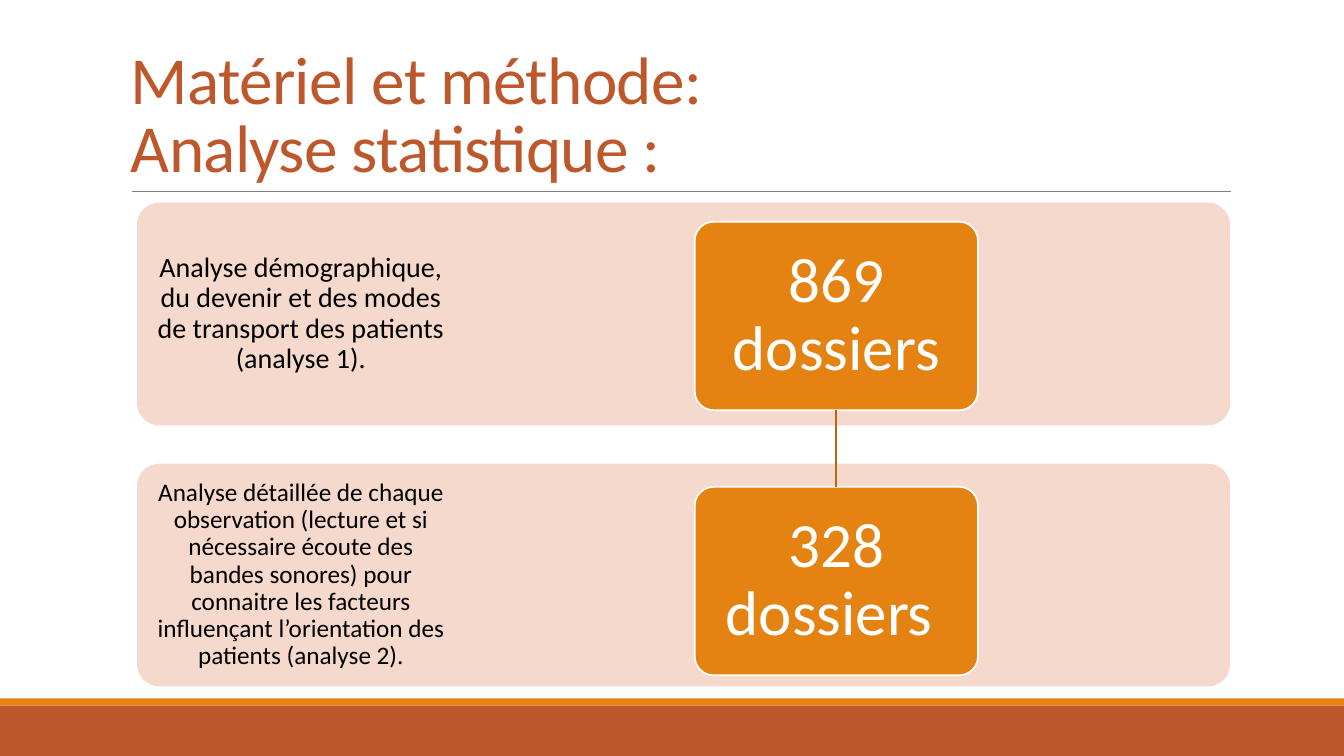
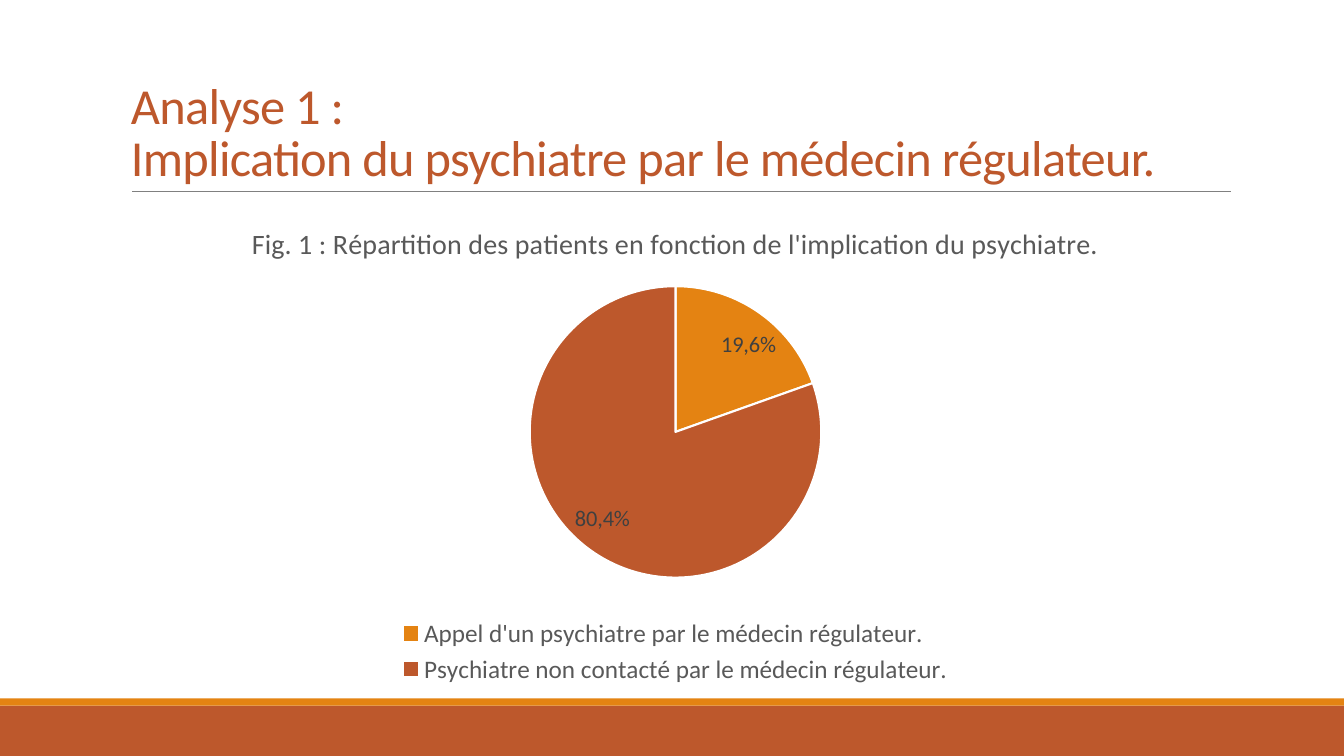
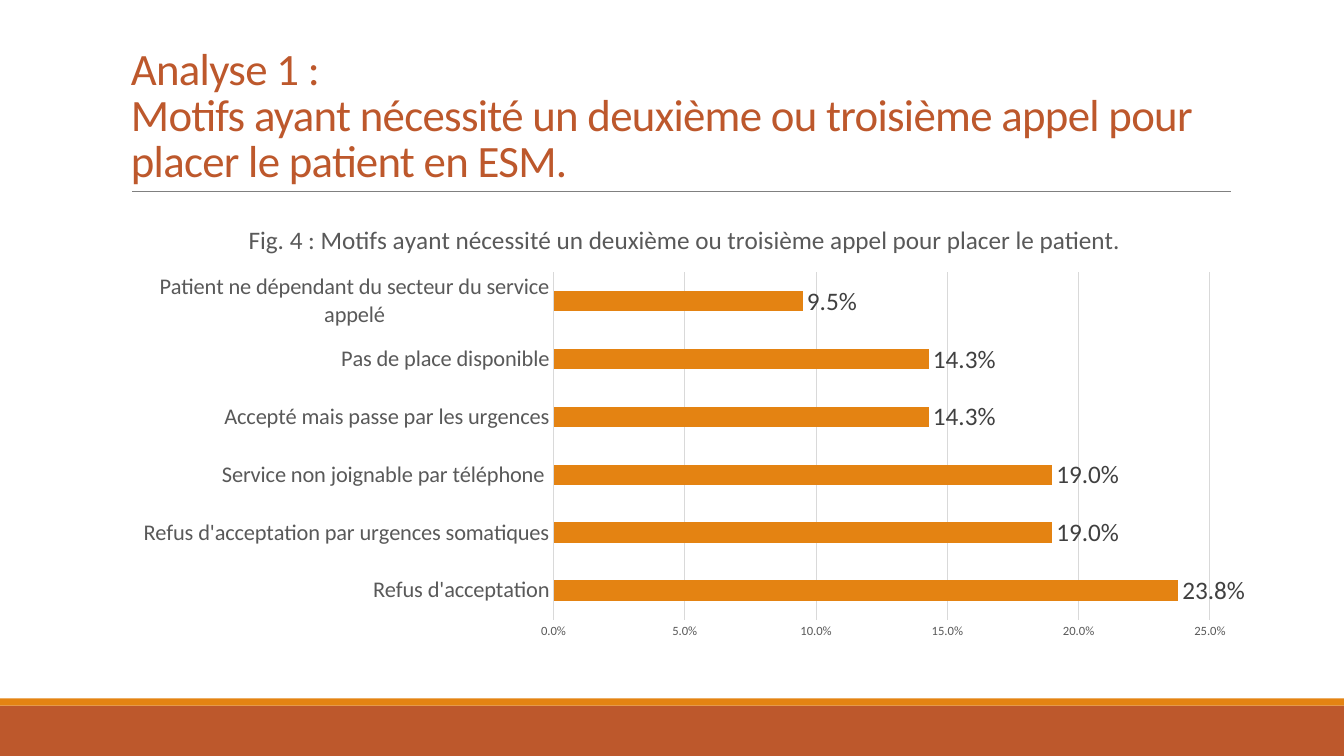
from lxml import etree
from pptx import Presentation
from pptx.chart.data import CategoryChartData
from pptx.dml.color import RGBColor
from pptx.enum.chart import XL_CHART_TYPE, XL_LABEL_POSITION, XL_LEGEND_POSITION, XL_TICK_MARK
from pptx.enum.shapes import MSO_CONNECTOR, MSO_SHAPE
from pptx.enum.text import MSO_ANCHOR, PP_ALIGN
from pptx.oxml import parse_xml
from pptx.oxml.ns import nsdecls, qn
from pptx.util import Pt

PIE, BAR = XL_CHART_TYPE.PIE, XL_CHART_TYPE.BAR_CLUSTERED
BEST_FIT, OUTSIDE_END = XL_LABEL_POSITION.BEST_FIT, XL_LABEL_POSITION.OUTSIDE_END
LEGEND_BOTTOM = XL_LEGEND_POSITION.BOTTOM
NO_TICK = XL_TICK_MARK.NONE
STRAIGHT = MSO_CONNECTOR.STRAIGHT
RECT, ROUND_RECT = MSO_SHAPE.RECTANGLE, MSO_SHAPE.ROUNDED_RECTANGLE
MIDDLE, BOTTOM = MSO_ANCHOR.MIDDLE, MSO_ANCHOR.BOTTOM
CENTER = PP_ALIGN.CENTER

FONT = "Calibri"
RUST, ORANGE, BLUSH, DARK_ORANGE = "BD582C", "E48312", "F5D9CC", "B7690E"
WHITE, BLACK = "FFFFFF", "000000"
RULE, GRID, GREY, CHARCOAL = "808080", "D9D9D9", "595959", "404040"
SLIDE_W, SLIDE_H = 1333, 750
BAND_W, BAND_H = 1084, 221
BOX_W, BOX_H = 281, 187


def px(n):
    """100 px to the inch."""
    return n * 9144


def rgb(color):
    return RGBColor.from_string(color)


def set_font(font, size, color):
    font.name, font.size, font.bold = FONT, Pt(size), False
    font.color.rgb = rgb(color)


def set_line(line, color, width):
    line.color.rgb = rgb(color)
    line.width = Pt(width)


def add_block(s, shape_type, x, y, w, h, fill, outline=None):
    sp = s.shapes.add_shape(shape_type, px(x), px(y), px(w), px(h))
    sp.shadow.inherit = False
    sp.fill.solid()
    sp.fill.fore_color.rgb = rgb(fill)
    if outline:
        set_line(sp.line, outline, 1.25)
    else:
        sp.line.fill.background()
    return sp


def add_line(s, x1, y1, x2, y2, color, width):
    line = s.shapes.add_connector(STRAIGHT, px(x1), px(y1), px(x2), px(y2))
    set_line(line.line, color, width)
    etree.SubElement(line._element.spPr, qn("a:effectLst"))
    return line


def add_panel(s, x, y, w, h, fill, text, size, color, inset, right=0, outline=None):
    """Rounded panel with centred text; right is extra space kept free of text."""
    sp = add_block(s, ROUND_RECT, x, y, w, h, fill, outline)
    sp.adjustments[0] = 0.1
    tf = sp.text_frame
    tf.word_wrap = True
    tf.vertical_anchor = MIDDLE
    tf.margin_left = tf.margin_top = tf.margin_bottom = px(inset)
    tf.margin_right = px(inset + right)
    p = tf.paragraphs[0]
    p.alignment = CENTER
    p.line_spacing = 0.9
    r = p.add_run()
    r.text = text
    set_font(r.font, size, color)
    return sp


def add_title(s, lines, size):
    tf = s.shapes.add_textbox(px(120), px(31), px(1100), px(159)).text_frame
    tf.word_wrap = True
    tf.vertical_anchor = BOTTOM
    p = tf.paragraphs[0]
    p.line_spacing = 0.85
    for i, line in enumerate(lines):
        if i:
            p.add_line_break()
        r = p.add_run()
        r.text = line
        set_font(r.font, size, RUST)
        r.font._element.set("spc", "-50")
    for br in p._p.findall(qn("a:br")):
        etree.SubElement(br, qn("a:rPr"), sz=str(size * 100))


def add_slide(prs, title, size):
    s = prs.slides.add_slide(prs.slide_layouts[6])
    add_block(s, RECT, 0, 700, SLIDE_W, 50, RUST)
    add_block(s, RECT, 0, 693, SLIDE_W, 7, ORANGE)
    add_line(s, 131, 190, 1221, 190, RULE, 0.5)
    add_title(s, title, size)
    return s


def add_chart(s, kind, w, h, title, title_size, values):
    data = CategoryChartData()
    data.categories = list(values)
    data.add_series("Series 1", list(values.values()))
    chart = s.shapes.add_chart(kind, px(120), px(202), px(w), px(h), data).chart
    set_font(chart.font, 10, BLACK)
    chart.has_legend = False
    chart.has_title = True
    r = chart.chart_title.text_frame.paragraphs[0].add_run()
    r.text = title
    set_font(r.font, title_size, GREY)
    chart.chart_title.include_in_layout = False
    return chart


def set_plot_area(chart, x, y, w, h):
    """Fix the inner plot area, in fractions of the chart."""
    area = chart._chartSpace.chart.plotArea
    for old in area.findall(qn("c:layout")):
        area.remove(old)
    area.insert(0, parse_xml(
        f'<c:layout {nsdecls("c")}><c:manualLayout><c:layoutTarget val="inner"/>'
        '<c:xMode val="edge"/><c:yMode val="edge"/>'
        f'<c:x val="{x}"/><c:y val="{y}"/><c:w val="{w}"/><c:h val="{h}"/>'
        '</c:manualLayout></c:layout>'))


def style_pie(chart, slices):
    """slices: one (colour, label) pair per point."""
    plot = chart.plots[0]
    plot.vary_by_categories = True
    labels = plot.series[0].data_labels
    labels.show_value = True
    labels.position = BEST_FIT
    set_font(labels.font, 16, CHARCOAL)
    for i, (color, label) in enumerate(slices):
        point = plot.series[0].points[i]
        point.format.fill.solid()
        point.format.fill.fore_color.rgb = rgb(color)
        set_line(point.format.line, WHITE, 1.5)
        r = point.data_label.text_frame.paragraphs[0].add_run()
        r.text = label
        set_font(r.font, 16, CHARCOAL)
        point.data_label.position = BEST_FIT
    chart.has_legend = True
    chart.legend.position = LEGEND_BOTTOM
    chart.legend.include_in_layout = False
    set_font(chart.legend.font, 18, GREY)


def style_bars(chart):
    plot = chart.plots[0]
    plot.vary_by_categories = False
    plot.gap_width = 182
    fill = plot.series[0].format.fill
    fill.solid()
    fill.fore_color.rgb = rgb(ORANGE)
    labels = plot.series[0].data_labels
    labels.show_value = True
    labels.position = OUTSIDE_END
    labels.number_format, labels.number_format_is_linked = "0.0%", False
    set_font(labels.font, 18, CHARCOAL)
    cat, val = chart.category_axis, chart.value_axis
    for axis, size in ((cat, 16), (val, 9)):
        axis.major_tick_mark = axis.minor_tick_mark = NO_TICK
        set_font(axis.tick_labels.font, size, GREY)
    set_line(cat.format.line, GRID, 0.75)
    val.format.line.fill.background()
    val.minimum_scale, val.maximum_scale, val.major_unit = 0, 0.25, 0.05
    val.has_major_gridlines = True
    set_line(val.major_gridlines.format.line, GRID, 0.75)
    val.tick_labels.number_format = "0.0%"
    val.tick_labels.number_format_is_linked = False


def build_method(prs):
    s = add_slide(prs, ["Matériel et méthode:", "Analyse statistique :"], 48)
    rows = [
        (201, 220, "Analyse démographique, du devenir et des modes de transport des "
         "patients (analyse 1).", 20, 10, "869 dossiers"),
        (460, 483, "Analyse détaillée de chaque observation (lecture et si nécessaire "
         "écoute des bandes sonores) pour connaitre les facteurs influençant "
         "l’orientation des patients (analyse 2).", 18, 8, "328 dossiers "),
    ]
    boxes = []
    for band_y, box_y, text, size, inset, count in rows:
        add_panel(s, 136, band_y, BAND_W, BAND_H, BLUSH, text, size, BLACK, inset,
                  right=BAND_W - 325)
        boxes.append(add_panel(s, 689, box_y, BOX_W, BOX_H, ORANGE, count, 45, WHITE, 19,
                               outline=WHITE))
    link = add_line(s, 830, 407, 830, 483, DARK_ORANGE, 1.25)
    link.begin_connect(boxes[0], 2)
    link.end_connect(boxes[1], 0)


def build_psychiatrist(prs):
    s = add_slide(prs, ["Analyse 1 :",
                        "Implication du psychiatre par le médecin régulateur."], 36)
    chart = add_chart(
        s, PIE, 1100, 482,
        "Fig. 1 : Répartition des patients en fonction de l'implication du psychiatre.", 20,
        {"Appel d'un psychiatre par le médecin régulateur.": 170,
         "Psychiatre non contacté par le médecin régulateur.": 699})
    set_plot_area(chart, 0.12, 0.17, 0.76, 0.6)
    style_pie(chart, [(ORANGE, "19,6%"), (RUST, "80,4%")])


def build_reasons(prs):
    s = add_slide(prs, ["Analyse 1 :", "Motifs ayant nécessité un deuxième ou troisième "
                        "appel pour placer le patient en ESM."], 32)
    chart = add_chart(
        s, BAR, 1118, 440, "Fig. 4 : Motifs ayant nécessité un deuxième ou troisième "
        "appel pour placer le patient.", 18,
        {"Refus d'acceptation": 0.238,
         "Refus d'acceptation par urgences somatiques": 0.19,
         "Service non joignable par téléphone ": 0.19,
         "Accepté mais passe par les urgences": 0.143,
         "Pas de place disponible": 0.143,
         "Patient ne dépendant du secteur du service appelé": 0.095})
    style_bars(chart)


def main():
    prs = Presentation()
    prs.slide_width, prs.slide_height = px(SLIDE_W), px(SLIDE_H)
    build_method(prs)
    build_psychiatrist(prs)
    build_reasons(prs)
    prs.save("out.pptx")


if __name__ == "__main__":
    main()
